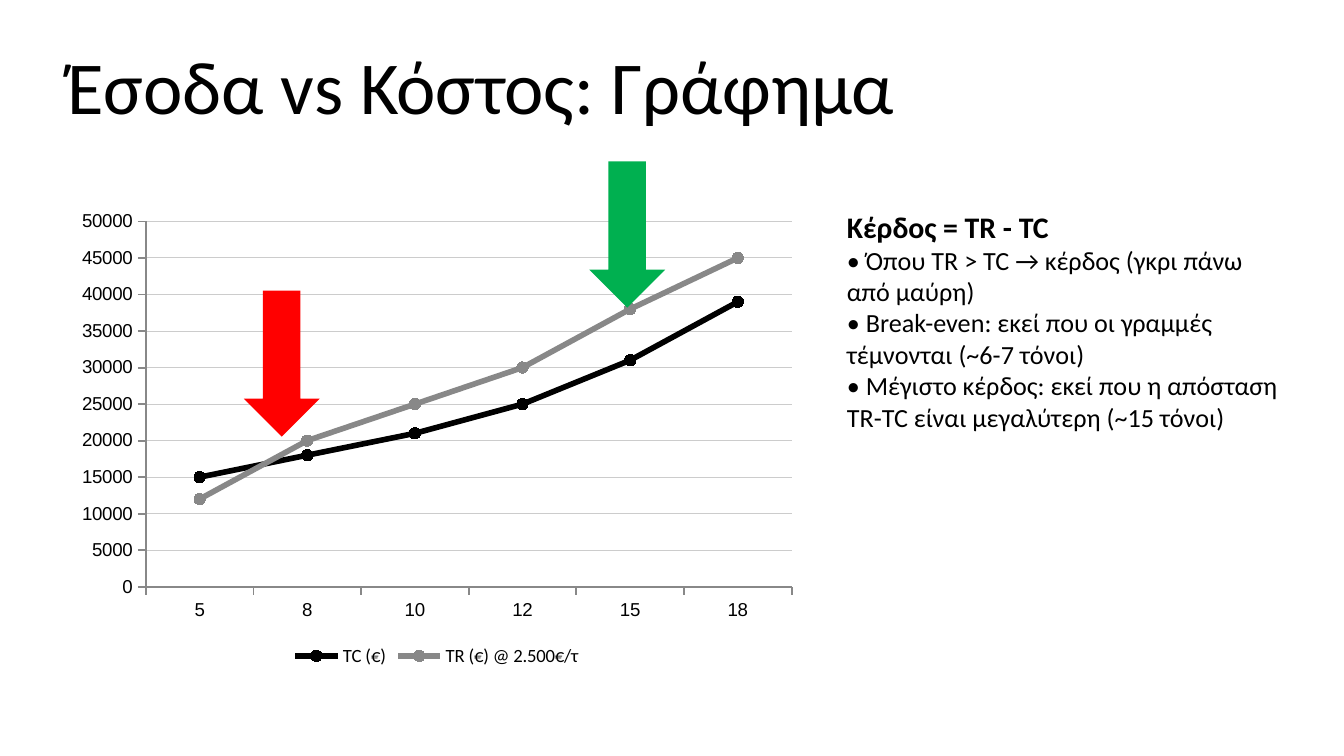
from dataclasses import dataclass

from lxml.etree import SubElement
from pptx import Presentation
from pptx.chart.data import CategoryChartData as ChartData
from pptx.dml.color import RGBColor as Rgb
from pptx.enum.chart import XL_CHART_TYPE as Kind
from pptx.enum.chart import XL_LEGEND_POSITION as Place
from pptx.enum.chart import XL_MARKER_STYLE as Mark
from pptx.enum.chart import XL_TICK_MARK as Tick
from pptx.enum.shapes import MSO_SHAPE as Shape
from pptx.enum.text import MSO_ANCHOR as Anchor
from pptx.enum.text import MSO_AUTO_SIZE as Fit
from pptx.enum.text import PP_ALIGN as Align
from pptx.oxml.ns import qn
from pptx.util import Cm, Pt


@dataclass(frozen=True)
class Theme:
    ink: str = "000000"
    gray: str = "888888"
    grid: str = "CCCCCC"
    red: str = "FF0000"
    green: str = "00B050"
    font: str = "Calibri"
    axis: str = "Arial"
    title: int = 40
    head: int = 16
    body: int = 14
    small: int = 10


THEME = Theme()

TONS = ["5", "8", "10", "12", "15", "18"]
SERIES = [
    ("TC (€)", [15000, 18000, 21000, 25000, 31000, 39000], THEME.ink),
    ("TR (€) @ 2.500€/τ", [12000, 20000, 25000, 30000, 38000, 45000], THEME.gray),
]
POINTS = [
    "• Όπου TR > TC → κέρδος (γκρι πάνω από μαύρη)",
    "• Break-even: εκεί που οι γραμμές τέμνονται (~6-7 τόνοι)",
    "• Μέγιστο κέρδος: εκεί που η απόσταση TR-TC είναι μεγαλύτερη (~15 τόνοι)",
]


def set_font(font, size, name=THEME.font, bold=False):
    font.name, font.size, font.bold = name, Pt(size), bold
    font.color.rgb = Rgb.from_string(THEME.ink)


def set_line(line, color, width):
    line.color.rgb = Rgb.from_string(color)
    line.width = Pt(width)


def set_fill(fill, color):
    fill.solid()
    fill.fore_color.rgb = Rgb.from_string(color)


def set_place(shape, left, top, width, height):
    shape.left, shape.top = Cm(left), Cm(top)
    shape.width, shape.height = Cm(width), Cm(height)


def set_flush(para):
    """Start every line at the left edge, without the template's bullet."""
    props = para._p.get_or_add_pPr()
    props.set("marL", "0")
    props.set("indent", "0")
    SubElement(props, qn("a:buNone"))


def add_title(slide, text):
    title = slide.shapes.title
    set_place(title, 1.27, 0.76, 22.86, 3.05)
    frame = title.text_frame
    frame.text = text
    frame.auto_size = Fit.NONE
    frame.vertical_anchor = Anchor.TOP
    frame.margin_left = frame.margin_right = 0
    frame.margin_top = frame.margin_bottom = 0
    para = frame.paragraphs[0]
    para.alignment = Align.LEFT
    set_font(para.font, THEME.title)


def add_points(slide, head, points):
    body = slide.placeholders[1]
    set_place(body, 15.75, 3.81, 8.89, 8.89)
    frame = body.text_frame
    frame.text = "\n".join([head, *points])
    frame.auto_size = Fit.NONE
    for i, para in enumerate(frame.paragraphs):
        set_flush(para)
        set_font(para.font, THEME.body if i else THEME.head, bold=i == 0)
        para.space_before = Pt(0)


def style_axis(axis):
    axis.major_tick_mark = Tick.OUTSIDE
    axis.minor_tick_mark = Tick.NONE
    set_font(axis.tick_labels.font, THEME.small, THEME.axis)
    set_line(axis.format.line, THEME.gray, 1)


def add_lines(slide):
    data = ChartData()
    data.categories = TONS
    for name, values, _ in SERIES:
        data.add_series(name, values)
    chart = slide.shapes.add_chart(
        Kind.LINE_MARKERS, Cm(1.27), Cm(3.81), Cm(13.97), Cm(8.89), data
    ).chart
    set_font(chart.font, THEME.small)
    chart.has_title = False
    chart.has_legend = True
    chart.legend.position = Place.BOTTOM
    chart.legend.include_in_layout = False
    for axis in (chart.category_axis, chart.value_axis):
        style_axis(axis)
    chart.value_axis.has_major_gridlines = True
    set_line(chart.value_axis.major_gridlines.format.line, THEME.grid, 0.5)
    plot = chart.plots[0]
    plot.vary_by_categories = False
    for line, (_, _, color) in zip(plot.series, SERIES):
        line.smooth = False
        set_line(line.format.line, color, 3)
        line.marker.style, line.marker.size = Mark.CIRCLE, 6
        set_fill(line.marker.format.fill, color)
        set_line(line.marker.format.line, color, 0.75)


def add_arrow(slide, left, top, color):
    """Add a down arrow with sharp corners."""
    arrow = slide.shapes.add_shape(
        Shape.DOWN_ARROW, Cm(left), Cm(top), Cm(1.35), Cm(2.72)
    )
    arrow.shadow.inherit = False
    set_fill(arrow.fill, color)
    set_line(arrow.line, color, 1)
    edge = arrow._element.spPr.find(qn("a:ln"))
    SubElement(edge, qn("a:miter")).set("lim", "800000")


def main():
    deck = Presentation()
    deck.slide_width, deck.slide_height = Cm(25.4), Cm(14.29)
    slide = deck.slides.add_slide(deck.slide_layouts[1])
    add_title(slide, "Έσοδα vs Κόστος: Γράφημα")
    add_lines(slide)
    add_points(slide, "Κέρδος = TR - TC", POINTS)
    add_arrow(slide, 4.65, 5.51, THEME.red)
    add_arrow(slide, 11.18, 3.07, THEME.green)
    deck.save("out.pptx")


if __name__ == "__main__":
    main()
